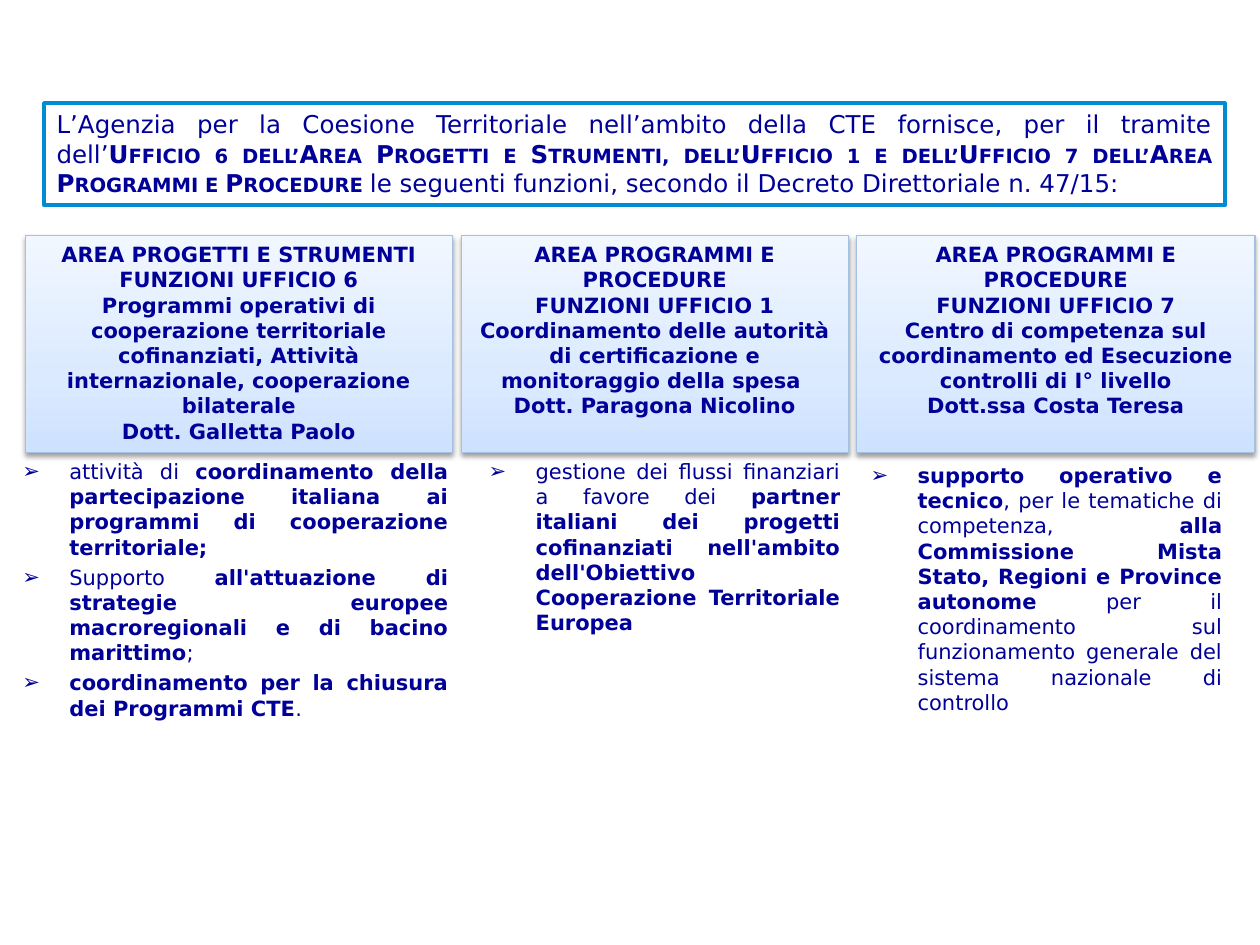
from copy import deepcopy
from lxml.etree import SubElement as Sub
from pptx import Presentation
from pptx.dml.color import RGBColor
from pptx.enum.shapes import MSO_SHAPE as Shape
from pptx.enum.text import MSO_ANCHOR as Anchor, MSO_AUTO_SIZE as Fit, PP_ALIGN as Align
from pptx.oxml.ns import qn
from pptx.util import Cm, Pt


def tint(code):
    return RGBColor.from_string(code)


class Deck:
    """Holds the style and the current slide, and draws each kind of element."""

    font = "DejaVu Sans"
    ink = "000099"
    edge = "008BD2"
    rim = "A5C0E1"
    fade = ((0, "CDE2FF"), (0.35, "DBEAFF"), (1, "F1F7FF"))
    hang = Cm(0.95)

    def __init__(self, slide):
        self.slide = slide

    def words(self, para, text, size, bold=False, small=False):
        run = para.add_run()
        run.text = text
        run.font.name = self.font
        run.font.size = Pt(size)
        run.font.bold = bold
        run.font.color.rgb = tint(self.ink)
        if small:
            run._r.get_or_add_rPr().set("cap", "small")

    def paras(self, frame, count, align):
        for _ in range(count - 1):
            frame.add_paragraph()
        for para in frame.paragraphs:
            para.alignment = align
        return frame.paragraphs

    def rect(self, box, line, width):
        shape = self.slide.shapes.add_shape(Shape.RECTANGLE, *map(Cm, box))
        shape.shadow.inherit = False
        shape.line.color.rgb = tint(line)
        shape.line.width = Pt(width)
        frame = shape.text_frame
        frame.word_wrap = True
        frame.vertical_anchor = Anchor.TOP
        frame.auto_size = Fit.SHAPE_TO_FIT_TEXT
        return shape

    def shade(self, shape):
        glow = shape._element.spPr.find(qn("a:effectLst"))
        outer = Sub(glow, qn("a:outerShdw"), blurRad=str(Pt(3.1)), dist=str(Pt(1.6)),
                    dir="5400000", rotWithShape="0")
        color = Sub(outer, qn("a:srgbClr"), val="000000")
        Sub(color, qn("a:alpha"), val="38000")

    def blend(self, shape):
        fill = shape.fill
        fill.gradient()
        fill.gradient_angle = 90
        stops = shape._element.spPr.find(qn("a:gradFill")).find(qn("a:gsLst"))
        stops.append(deepcopy(stops[0]))
        for stop, (spot, code) in zip(fill.gradient_stops, self.fade):
            stop.position = spot
            stop.color.rgb = tint(code)

    def intro(self, box, runs):
        shape = self.rect(box, self.edge, 2.25)
        shape.fill.background()
        para = self.paras(shape.text_frame, 1, Align.JUSTIFY)[0]
        for text, strong in runs:
            self.words(para, text, 14, strong, strong)

    def card(self, box, lines):
        shape = self.rect(box, self.rim, 0.75)
        self.blend(shape)
        self.shade(shape)
        for para, text in zip(self.paras(shape.text_frame, len(lines), Align.CENTER), lines):
            self.words(para, text, 12, True)

    def list(self, box, items):
        frame = self.slide.shapes.add_textbox(*map(Cm, box)).text_frame
        frame.word_wrap = True
        for i, para in enumerate(self.paras(frame, len(items), Align.JUSTIFY)):
            props = para._p.get_or_add_pPr()
            props.set("marL", str(self.hang))
            props.set("indent", str(-self.hang))
            Sub(props, qn("a:buFont"), typeface=self.font)
            Sub(props, qn("a:buChar"), char="➢")
            if i:
                para.space_before = Pt(2.8)
            for text, bold in items[i]:
                self.words(para, text, 12, bold)


INTRO = [
    ("L’Agenzia per la Coesione Territoriale nell’ambito della CTE fornisce, "
     "per il tramite dell’", False),
    ("Ufficio 6 dell’Area Progetti e Strumenti, dell’Ufficio 1 e dell’Ufficio 7 "
     "dell’Area Programmi e Procedure ", True),
    ("le seguenti funzioni, secondo il Decreto Direttoriale n. 47/15:", False),
]

CARDS = [
    (0.51, 8.61, ["AREA PROGETTI E STRUMENTI", "FUNZIONI UFFICIO 6",
                  "Programmi operativi di cooperazione territoriale cofinanziati, "
                  "Attività internazionale, cooperazione bilaterale",
                  "Dott. Galletta Paolo"]),
    (9.3, 7.8, ["AREA PROGRAMMI E PROCEDURE", "FUNZIONI UFFICIO 1",
                "Coordinamento delle autorità di certificazione e "
                "monitoraggio della spesa ",
                "Dott. Paragona Nicolino"]),
    (17.27, 8.03, ["AREA PROGRAMMI E PROCEDURE", "FUNZIONI UFFICIO 7",
                   "Centro di competenza sul coordinamento ed Esecuzione "
                   "controlli di I° livello",
                   "Dott.ssa Costa Teresa"]),
]

LISTS = [
    ((0.2, 9.12, 9.09, 8.79), [
        [("attività di ", False),
         ("coordinamento della partecipazione italiana ai programmi di "
          "cooperazione territoriale;", True)],
        [("Supporto ", False),
         ("all'attuazione di strategie europee macroregionali e di bacino "
          "marittimo", True),
         (";", False)],
        [("coordinamento per la chiusura dei Programmi CTE", True), (".", False)],
    ]),
    ((9.6, 9.12, 7.59, 3.61), [
        [("gestione dei flussi finanziari a favore dei ", False),
         ("partner italiani dei progetti cofinanziati nell'ambito "
          "dell'Obiettivo Cooperazione Territoriale Europea", True)],
    ]),
    ((17.3, 9.2, 7.59, 5.51), [
        [("supporto operativo e tecnico", True),
         (", per le tematiche di competenza, ", False),
         ("alla Commissione Mista Stato, Regioni e Province autonome", True),
         (" per il coordinamento sul funzionamento generale del sistema "
          "nazionale di controllo", False)],
    ]),
]


def main():
    show = Presentation()
    show.slide_width, show.slide_height = Cm(25.4), Cm(19.05)
    deck = Deck(show.slides.add_slide(show.slide_layouts[6]))
    for left, width, lines in CARDS:
        deck.card((left, 4.75, width, 4.37), lines)
    deck.intro((0.89, 2.08, 23.8, 2.06), INTRO)
    for box, items in LISTS:
        deck.list(box, items)
    show.save("out.pptx")


if __name__ == "__main__":
    main()
